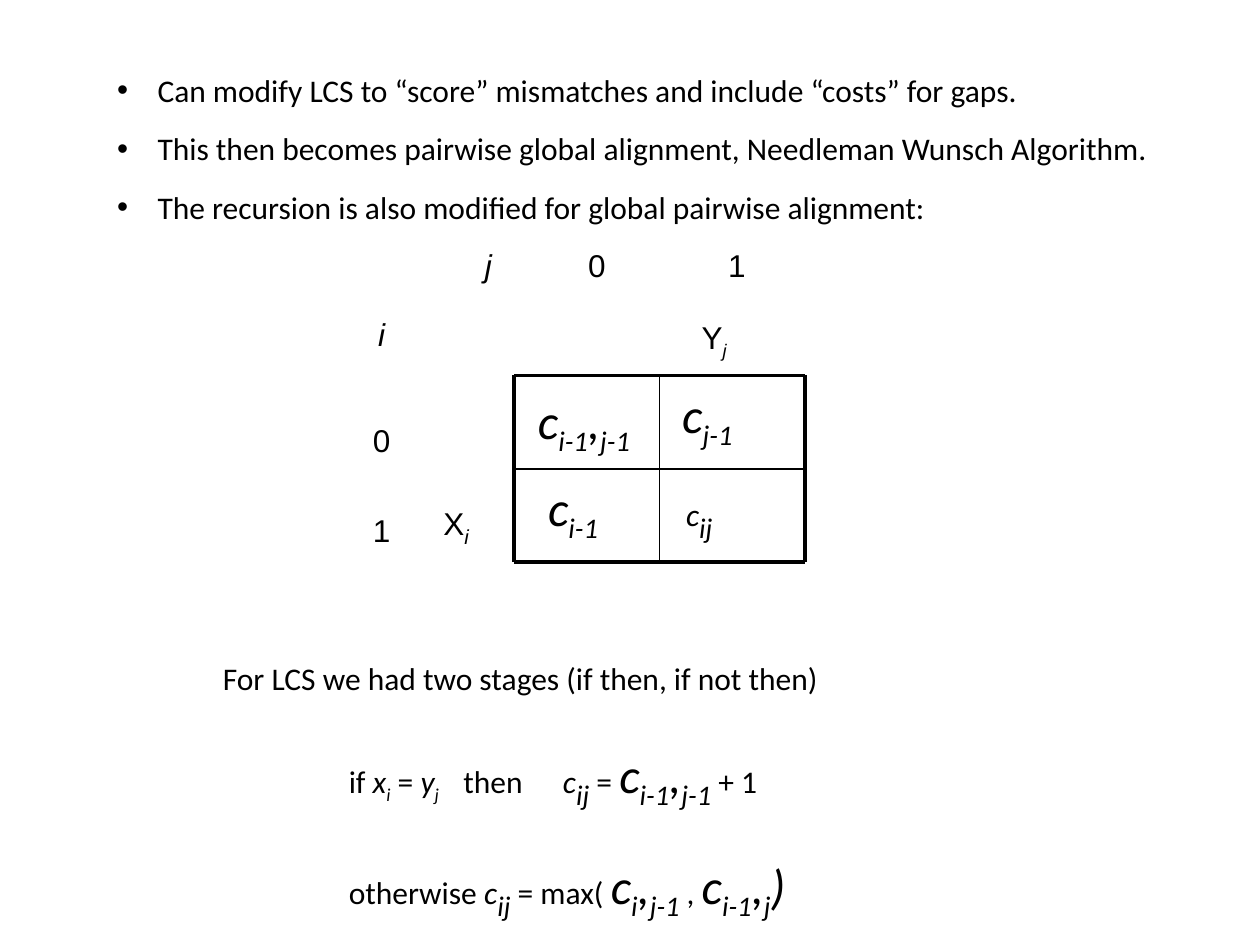
from dataclasses import dataclass

from lxml import etree
from pptx import Presentation, util as u
from pptx.dml.color import RGBColor
from pptx.enum import shapes as s, text as t
from pptx.oxml.ns import qn


@dataclass(frozen=True)
class Theme:
    ink: str = "000000"
    sans: str = "Calibri"
    label: str = "Arial"
    normal: int = 18
    medium: int = 20
    large: int = 28
    thick: float = 2.25
    thin: float = 1


THEME = Theme()

# style: (size, italic, subscript)
PLAIN = (THEME.normal, False, False)
VAR = (THEME.normal, True, False)
SUB = (THEME.normal, True, True)
MEDIUM_SUB = (THEME.medium, True, True)
BIG = (THEME.large, True, False)
BIG_SUB = (THEME.large, True, True)

BULLETS = [
    "Can modify LCS to “score” mismatches and include “costs” for gaps.",
    "This then becomes pairwise global alignment, Needleman Wunsch Algorithm.",
    "The recursion is also modified for global pairwise alignment:",
]

DIAGONAL = [("c", BIG), ("i-1", BIG_SUB), (",", BIG), ("j-1", BIG_SUB)]
CURRENT = [("c", VAR), ("ij", BIG_SUB)]
# each cell: (left inset, top inset, runs)
SCORES = [
    [(0.19, 0.12, DIAGONAL), (0.18, 0.07, [("c", BIG), ("j-1", BIG_SUB)])],
    [(0.27, 0.07, [("c", BIG), ("i-1", BIG_SUB)]), (0.21, 0.07, CURRENT)],
]
GRID_LEFT, GRID_TOP, COLUMN, ROW = 4.08, 2.98, 1.155, 0.74

COLUMN_INDEX = [("j", VAR), ("\t0\t1", PLAIN)]
ROW_INDEX = [[("i", VAR)], [("0", PLAIN)], [("1", PLAIN)]]
# each sequence symbol: (left, top, runs)
SYMBOLS = [
    (5.47, 2.37, [("Y", PLAIN), ("j", SUB)]),
    (3.42, 3.81, [("X", PLAIN), ("i", MEDIUM_SUB)]),
]
STAGES = "For LCS we had two stages (if then, if not then)"
RECURSION = [
    [("if ", PLAIN), ("x", VAR), ("i", SUB), (" = ", PLAIN), ("y", VAR), ("j", SUB),
     ("\tthen\t", PLAIN), *CURRENT, (" = ", PLAIN), *DIAGONAL, (" + 1", PLAIN)],
    [("otherwise ", PLAIN), *CURRENT, (" = max( ", PLAIN),
     ("c", BIG), ("i", BIG_SUB), (",", BIG), ("j-1", BIG_SUB), (" , ", PLAIN),
     ("c", BIG), ("i-1", BIG_SUB), (",", BIG), ("j", BIG_SUB), (")", BIG)],
]


def write(frame, paragraphs, font=THEME.sans, align=None, spacing=(), before=0, after=0,
          tabs=(), hanging=0):
    """Fill a frame with paragraphs, each a list of (text, style) runs."""
    for n, runs in enumerate(paragraphs):
        para = frame.paragraphs[0] if n == 0 else frame.add_paragraph()
        para.alignment = align
        if spacing:
            para.line_spacing = spacing[n]
        para.space_before = u.Pt(before if n else 0)
        para.space_after = u.Pt(after)
        props = para._p.get_or_add_pPr()
        if hanging:
            props.set("marL", str(u.Inches(hanging)))
            props.set("indent", str(-u.Inches(hanging)))
            etree.SubElement(props, qn("a:buChar"), char="•")
        if tabs:
            stops = etree.SubElement(props, qn("a:tabLst"))
            for stop in tabs:
                etree.SubElement(stops, qn("a:tab"), pos=str(u.Inches(stop)), algn="l")
        for words, (size, italic, subscript) in runs:
            run = para.add_run()
            run.text = words
            run.font.name, run.font.size, run.font.italic = font, u.Pt(size), italic
            run.font.color.rgb = RGBColor.from_string(THEME.ink)
            if subscript:
                run._r.get_or_add_rPr().set("baseline", "-25000")


def add_text(slide, box, paragraphs, wrap=True, inset=(0.1, 0.05), **style):
    frame = slide.shapes.add_textbox(*map(u.Inches, box)).text_frame
    frame.word_wrap = wrap
    frame.margin_left, frame.margin_top = map(u.Inches, inset)
    write(frame, paragraphs, **style)


def add_rule(slide, x1, y1, x2, y2, width):
    rule = slide.shapes.add_connector(
        s.MSO_CONNECTOR.STRAIGHT, *map(u.Inches, (x1, y1, x2, y2)))
    rule.line.color.rgb = RGBColor.from_string(THEME.ink)
    rule.line.width = u.Pt(width)
    etree.SubElement(rule._element.spPr, qn("a:effectLst"))


def add_score_grid(slide):
    rows, columns = len(SCORES), len(SCORES[0])
    xs = [GRID_LEFT + n * COLUMN for n in range(columns + 1)]
    ys = [GRID_TOP + n * ROW for n in range(rows + 1)]
    for y, score_row in zip(ys, SCORES):
        for x, (left, top, runs) in zip(xs, score_row):
            add_text(slide, (x, y, COLUMN, ROW), [runs], inset=(left, top))
    for y in ys:
        width = THEME.thick if y in (ys[0], ys[-1]) else THEME.thin
        add_rule(slide, xs[0], y, xs[-1], y, width)
    for x in xs:
        width = THEME.thick if x in (xs[0], xs[-1]) else THEME.thin
        add_rule(slide, x, ys[0], x, ys[-1], width)


def add_bullets(slide):
    body = slide.placeholders[1]
    body.left, body.top, body.width, body.height = map(u.Inches, (0.83, 0, 9, 2.19))
    body.text_frame.auto_size = t.MSO_AUTO_SIZE.NONE
    body.text_frame.margin_top = u.Inches(0.56)
    write(body.text_frame, [[(line, PLAIN)] for line in BULLETS], after=12, hanging=0.32)


def main():
    deck = Presentation()
    deck.slide_width, deck.slide_height = u.Inches(10), u.Inches(7.5)
    slide = deck.slides.add_slide(deck.slide_layouts[1])
    title = slide.shapes.title.element
    title.getparent().remove(title)

    add_bullets(slide)
    add_text(slide, (3.75, 1.94, 2.58, 0.37), [COLUMN_INDEX], font=THEME.label,
             spacing=[0.9], tabs=(0.82, 1.93))
    add_text(slide, (2.75, 2.03, 0.56, 2.38), ROW_INDEX, font=THEME.label,
             align=t.PP_ALIGN.CENTER, spacing=[2.4, 2.8, 2.4])
    for left, top, runs in SYMBOLS:
        add_text(slide, (left, top, 0.6, 0.62), [runs], font=THEME.label, spacing=[1.3])
    add_score_grid(slide)
    add_text(slide, (1.67, 5.18, 6.58, 0.5), [[(STAGES, PLAIN)]], wrap=False)
    add_text(slide, (2.67, 5.86, 4.8, 1.3), RECURSION, wrap=False, before=25,
             tabs=(0.91, 1.7))
    deck.save("out.pptx")


if __name__ == "__main__":
    main()
